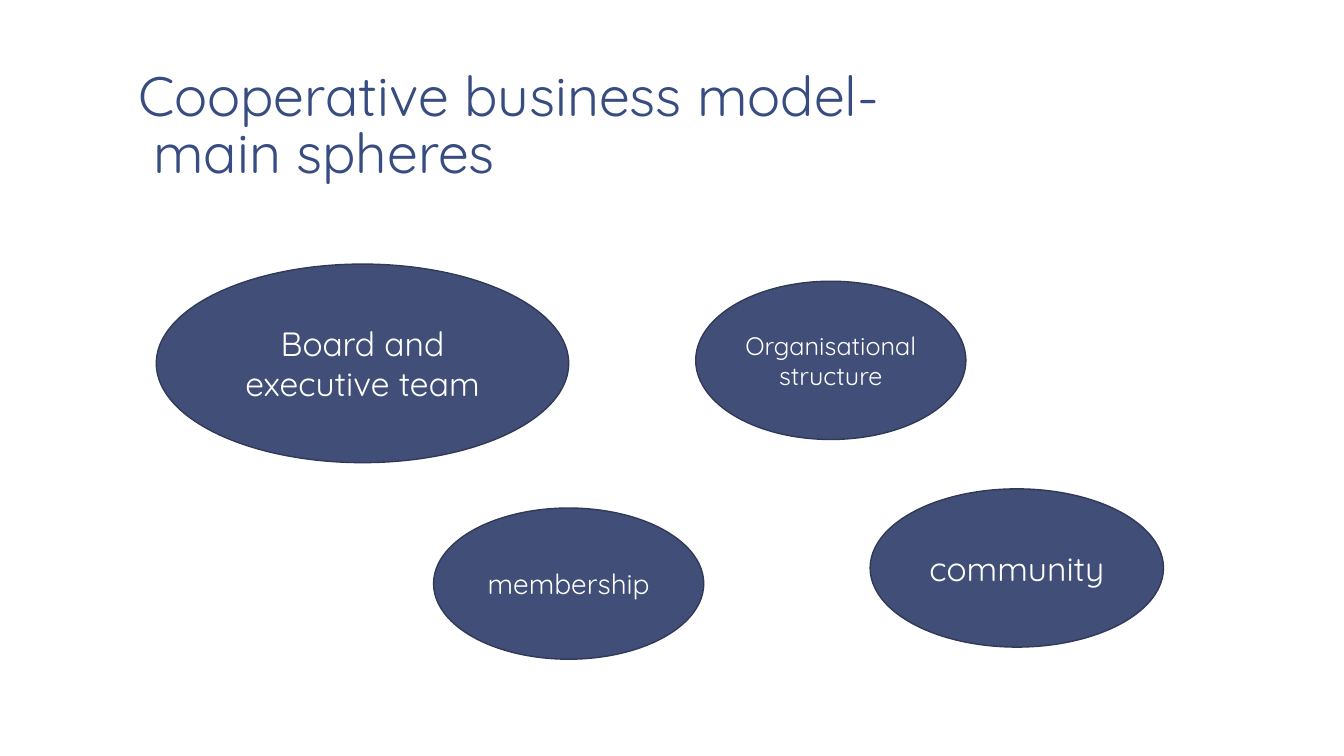
from dataclasses import dataclass

from pptx import Presentation
from pptx.dml.color import RGBColor
from pptx.enum.shapes import MSO_SHAPE
from pptx.enum.text import MSO_ANCHOR, PP_ALIGN
from pptx.util import Pt

PX = 9144  # EMU per px, 100 px to the inch


@dataclass(frozen=True)
class Theme:
    face: str = "Quicksand"
    back: RGBColor = RGBColor(0xFF, 0xFF, 0xFF)
    title: RGBColor = RGBColor(0x37, 0x4C, 0x81)
    fill: RGBColor = RGBColor(0x41, 0x4E, 0x77)
    edge: RGBColor = RGBColor(0x30, 0x3A, 0x58)
    label: RGBColor = RGBColor(0xFF, 0xFF, 0xFF)
    head: float = 39.6
    large: int = 24
    mid: int = 20
    small: int = 18


THEME = Theme()

# Label, box in px, type size
SPHERES = [
    ("membership", (430, 504, 268, 150), THEME.mid),
    ("Organisational structure", (690, 279, 268, 157), THEME.small),
    ("community", (863, 485, 291, 157), THEME.large),
    ("Board and executive team", (155, 262, 409, 197), THEME.large),
]


def scale(box):
    return [side * PX for side in box]


def apply(target, values):
    for name, value in values.items():
        setattr(target, name, value)


def write(shape, text, size, color, frame, para):
    apply(shape.text_frame, {"word_wrap": True, **frame})
    first = shape.text_frame.paragraphs[0]
    first.text = text
    apply(first, para)
    for run in first.runs:
        apply(run.font, {"name": THEME.face, "size": Pt(size)})
        run.font.color.rgb = color


def add_title(slide, text, box):
    shape = slide.shapes.add_textbox(*scale(box))
    frame = {
        "vertical_anchor": MSO_ANCHOR.BOTTOM,
        "margin_left": 13 * PX,
        "margin_right": 13 * PX,
        "margin_top": 7 * PX,
        "margin_bottom": 7 * PX,
    }
    write(shape, text, THEME.head, THEME.title, frame, {"line_spacing": 0.85})


def add_sphere(slide, text, box, size):
    shape = slide.shapes.add_shape(MSO_SHAPE.OVAL, *scale(box))
    shape.shadow.inherit = False
    shape.fill.solid()
    shape.fill.fore_color.rgb = THEME.fill
    shape.line.color.rgb = THEME.edge
    shape.line.width = Pt(1)
    frame = {"vertical_anchor": MSO_ANCHOR.MIDDLE}
    write(shape, text, size, THEME.label, frame, {"alignment": PP_ALIGN.CENTER})


def main():
    deck = Presentation()
    apply(deck, {"slide_width": 1333 * PX, "slide_height": 750 * PX})
    slide = deck.slides.add_slide(deck.slide_layouts[6])
    slide.background.fill.solid()
    slide.background.fill.fore_color.rgb = THEME.back

    # Heading, with a line break inside one paragraph
    add_title(slide, "Cooperative business model-\v main spheres", (124, 80, 1111, 110))

    # Spheres of the model
    for text, box, size in SPHERES:
        add_sphere(slide, text, box, size)

    deck.save("out.pptx")


if __name__ == "__main__":
    main()
